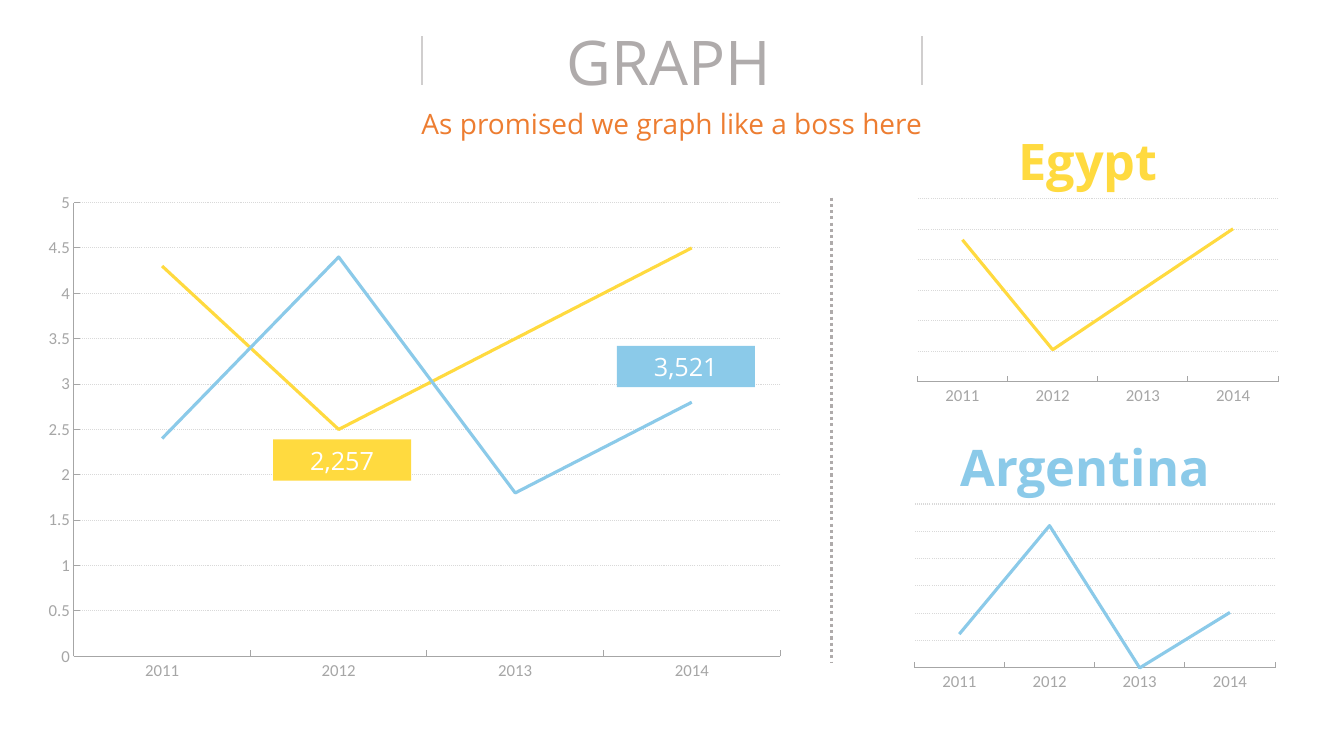
from pptx import Presentation
from pptx.chart.data import CategoryChartData as Data
from pptx.dml.color import RGBColor as Rgb
from pptx.enum.chart import XL_CHART_TYPE as Kind, XL_TICK_MARK as Tick
from pptx.enum.dml import MSO_LINE as Dash
from pptx.enum.shapes import MSO_CONNECTOR as Conn, MSO_SHAPE as Form
from pptx.enum.text import MSO_ANCHOR as Anchor, MSO_AUTO_SIZE as Fit, PP_ALIGN as Align
from pptx.oxml import parse_xml
from pptx.oxml.ns import nsdecls, qn
from pptx.util import Pt

GOLD, BLUE, ORANGE, WHITE = "FFDA3F", "8BCAE9", "ED7D31", "FFFFFF"
GRAY, RULE, AXIS, GRID = "AFABAB", "D0CECE", "A6A6A6", "D9D9D9"
YEARS = ["2011", "2012", "2013", "2014"]


def color(code):
    return Rgb.from_string(code)


def box(*sides):
    return [Pt(side) for side in sides]


def write(shape, text, size, ink, bold=False, anchor=Anchor.MIDDLE, fit=Fit.NONE):
    frame = shape.text_frame
    frame.word_wrap = True
    frame.auto_size = fit
    frame.vertical_anchor = anchor
    para = frame.paragraphs[0]
    para.alignment = Align.CENTER
    run = para.add_run()
    run.text = text
    font = run.font
    font.name, font.size, font.bold = "Open Sans", Pt(size), bold
    font.color.rgb = color(ink)


def label(slide, place, *args, **kw):
    write(slide.shapes.add_textbox(*box(*place)), *args, **kw)


def callout(slide, left, top, text, fill):
    shape = slide.shapes.add_shape(Form.RECTANGLE, *box(left, top, 98.6, 29.5))
    shape.shadow.inherit = False
    shape.fill.solid()
    shape.fill.fore_color.rgb = color(fill)
    shape.line.fill.background()
    write(shape, text, 18, WHITE)


def stroke(line, ink, width, dash=None):
    line.color.rgb = color(ink)
    line.width = Pt(width)
    if dash:
        line.dash_style = dash


def upright(slide, x, top, end, ink, width, dash=None):
    line = slide.shapes.add_connector(Conn.STRAIGHT, *box(x, top, x, end))
    stroke(line.line, ink, width, dash)
    line._element.spPr.append(parse_xml(f"<a:effectLst {nsdecls('a')}/>"))


def style(axis):
    axis.major_tick_mark = Tick.INSIDE
    axis.minor_tick_mark = Tick.NONE
    font = axis.tick_labels.font
    font.name, font.size = "Calibri", Pt(12)
    font.color.rgb = color(AXIS)
    stroke(axis.format.line, AXIS, 0.75)


def fix_plot(chart, plot):
    """Set the inner plot area as shares of the chart frame."""
    area = chart._chartSpace.chart.plotArea
    for old in area.findall(qn("c:layout")):
        area.remove(old)
    modes = '<c:layoutTarget val="inner"/><c:xMode val="edge"/><c:yMode val="edge"/>'
    sides = "".join(f'<c:{key} val="{val}"/>' for key, val in zip("xywh", plot))
    area.insert(0, parse_xml(
        f"<c:layout {nsdecls('c')}><c:manualLayout>{modes}{sides}"
        "</c:manualLayout></c:layout>"))


def graph(slide, place, rows, scale, plot=None):
    """Draw a line chart; one with a fixed plot has no value labels."""
    data = Data()
    data.categories = YEARS
    for num, (vals, ink) in enumerate(rows, 1):
        data.add_series(f"Series {num}", vals)
    chart = slide.shapes.add_chart(Kind.LINE, *box(*place), data).chart
    chart.has_title = chart.has_legend = False
    chart.font.name, chart.font.size = "Calibri", Pt(10)
    chart.plots[0].vary_by_categories = False
    for line, (vals, ink) in zip(chart.plots[0].series, rows):
        line.smooth = False
        stroke(line.format.line, ink, 2.25)

    # Axes and grid
    style(chart.category_axis)
    axis = chart.value_axis
    style(axis)
    axis.minimum_scale, axis.maximum_scale, axis.major_unit = scale
    axis.has_major_gridlines = True
    stroke(axis.major_gridlines.format.line, GRID, 0.75, Dash.ROUND_DOT)
    if plot:
        axis.visible = False
        fix_plot(chart, plot)


def main():
    prs = Presentation()
    prs.slide_width, prs.slide_height = box(960, 540)
    slide = prs.slides.add_slide(prs.slide_layouts[5])

    # Heading
    title = slide.shapes.title
    title.left, title.top, title.width, title.height = box(154.1, 13.7, 647.3, 60.5)
    write(title, "GRAPH", 44, GRAY, anchor=Anchor.TOP, fit=Fit.SHAPE_TO_FIT_TEXT)
    label(slide, (241.9, 72.7, 475.9, 31.7), "As promised we graph like a boss here",
          20, ORANGE, anchor=Anchor.TOP, fit=Fit.SHAPE_TO_FIT_TEXT)
    for x in (301.7, 658.8):
        upright(slide, x, 25.9, 60.5, RULE, 1.5)

    # Both countries
    graph(slide, (23.8, 130.3, 544.3, 362.9),
          [((4.3, 2.5, 3.5, 4.5), GOLD), ((2.4, 4.4, 1.8, 2.8), BLUE)], (0, 5, 0.5))
    callout(slide, 440.6, 247, "3,521", BLUE)
    callout(slide, 195.1, 313.9, "2,257", GOLD)
    upright(slide, 594, 141.1, 473, GRAY, 2.25, Dash.ROUND_DOT)

    # Each country
    graph(slide, (630.7, 133.9, 292.3, 165.6), [((96, 56, 78, 100), GOLD)],
          (44.4, 111, 11.1), (0.084, 0.048, 0.882, 0.79))
    graph(slide, (631.4, 349.9, 292.3, 148.3), [((55, 100, 41, 64), BLUE)],
          (41, 109, 11.33), (0.074, 0.068, 0.882, 0.79))
    label(slide, (653.8, 303.8, 242.6, 58.3), "Argentina", 36, BLUE, bold=True)
    label(slide, (673.2, 85, 208.1, 59), "Egypt", 36, GOLD, bold=True)

    prs.save("out.pptx")


if __name__ == "__main__":
    main()
